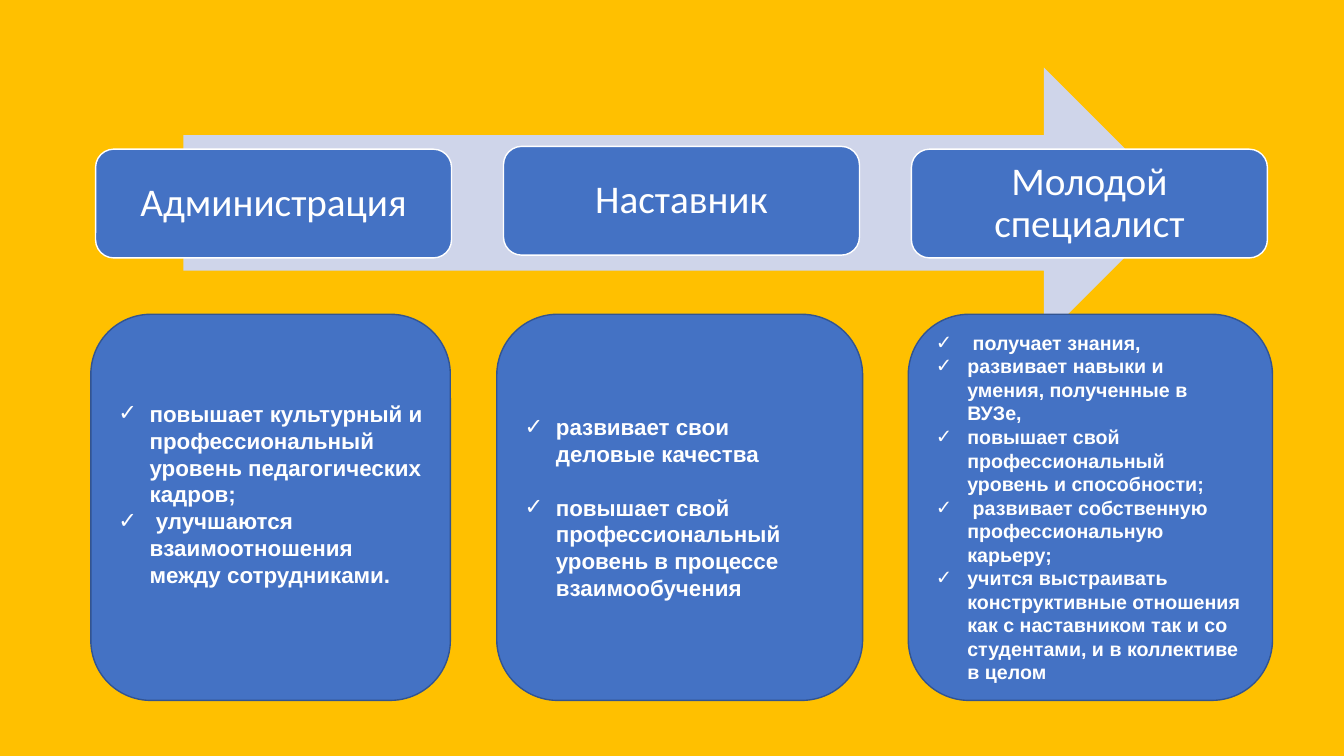
from lxml.etree import SubElement
from pptx import Presentation
from pptx.dml.color import RGBColor
from pptx.enum.shapes import MSO_SHAPE
from pptx.enum.text import MSO_ANCHOR, PP_ALIGN
from pptx.oxml.ns import qn
from pptx.util import Cm, Pt

COLORS = {
    "background": "FFC000",
    "arrow": "CFD5EA",
    "box": "4472C4",
    "card_line": "325491",
    "white": "FFFFFF",
}


class RoleSlide:
    def __init__(self, prs):
        self.s = prs.slides.add_slide(prs.slide_layouts[6])
        fill = self.s.background.fill
        fill.solid()
        fill.fore_color.rgb = self.color("background")

    def color(self, name):
        return RGBColor.from_string(COLORS[name])

    def shape(self, kind, left, top, width, height, fill, line=None):
        sp = self.s.shapes.add_shape(kind, Cm(left), Cm(top), Cm(width), Cm(height))
        sp.shadow.inherit = False
        sp.fill.solid()
        sp.fill.fore_color.rgb = self.color(fill)
        if line:
            sp.line.color.rgb = self.color(line)
            sp.line.width = Pt(1)
        else:
            sp.line.fill.background()
        return sp

    def run(self, p, text, font, size, bold=False):
        r = p.add_run()
        r.text = text
        r.font.name = font
        r.font.size = Pt(size)
        r.font.bold = bold
        r.font.color.rgb = self.color("white")

    def arrow(self, left, top, width, height):
        self.shape(MSO_SHAPE.RIGHT_ARROW, left, top, width, height, "arrow")

    def label(self, left, top, text):
        sp = self.shape(MSO_SHAPE.ROUNDED_RECTANGLE, left, top, 8.97, 2.74, "box", "white")
        tf = sp.text_frame
        tf.word_wrap = True
        tf.vertical_anchor = MSO_ANCHOR.MIDDLE
        tf.margin_left = tf.margin_right = tf.margin_top = tf.margin_bottom = Cm(0.3)
        p = tf.paragraphs[0]
        p.alignment = PP_ALIGN.CENTER
        p.line_spacing = 0.9
        self.run(p, text, "Calibri", 28)

    def bullet(self, p):
        pPr = p._p.get_or_add_pPr()
        pPr.set("marL", str(Cm(0.79)))
        pPr.set("indent", str(-Cm(0.79)))
        SubElement(pPr, qn("a:buFont")).set("typeface", "Arial")
        SubElement(pPr, qn("a:buChar")).set("char", "✓")

    def card(self, left, width, size, items, gap=0, bottom=0.13):
        sp = self.shape(MSO_SHAPE.ROUNDED_RECTANGLE, left, 7.92, width, 9.73, "box", "card_line")
        tf = sp.text_frame
        tf.word_wrap = True
        tf.vertical_anchor = MSO_ANCHOR.MIDDLE
        tf.margin_bottom = Cm(bottom)
        for i, item in enumerate(items):
            p = tf.add_paragraph() if i else tf.paragraphs[0]
            self.bullet(p)
            p.alignment = PP_ALIGN.LEFT
            if i and gap:
                p.space_before = Pt(gap)
            for j, line in enumerate(item.split("\n")):
                if j:
                    p.add_line_break()
                self.run(p, line, "Arial", size, True)


def main():
    prs = Presentation()
    prs.slide_width, prs.slide_height = Cm(33.87), Cm(19.05)
    slide = RoleSlide(prs)
    slide.arrow(4.62, 1.7, 25.1, 6.83)

    labels = [("Администрация", 3.76), ("Наставник", 3.69), ("Молодой специалист", 3.76)]
    for i, (text, top) in enumerate(labels):
        slide.label(2.41 + 10.28 * i, top, text)

    slide.card(2.29, 9.06, 16, [
        "повышает культурный и профессиональный уровень педагогических кадров;",
        " улучшаются взаимоотношения между сотрудниками.",
    ], bottom=0.8)
    slide.card(12.52, 9.22, 16, [
        "развивает свои\nделовые качества",
        "повышает свой профессиональный уровень в процессе взаимообучения",
    ], gap=19)
    slide.card(22.89, 9.18, 14, [
        " получает знания,",
        "развивает навыки и умения, полученные в ВУЗе,",
        "повышает свой профессиональный уровень и способности;",
        " развивает собственную профессиональную карьеру;",
        "учится выстраивать конструктивные отношения как с наставником так и со "
        "студентами, и в коллективе в целом",
    ])
    prs.save("out.pptx")


if __name__ == "__main__":
    main()
